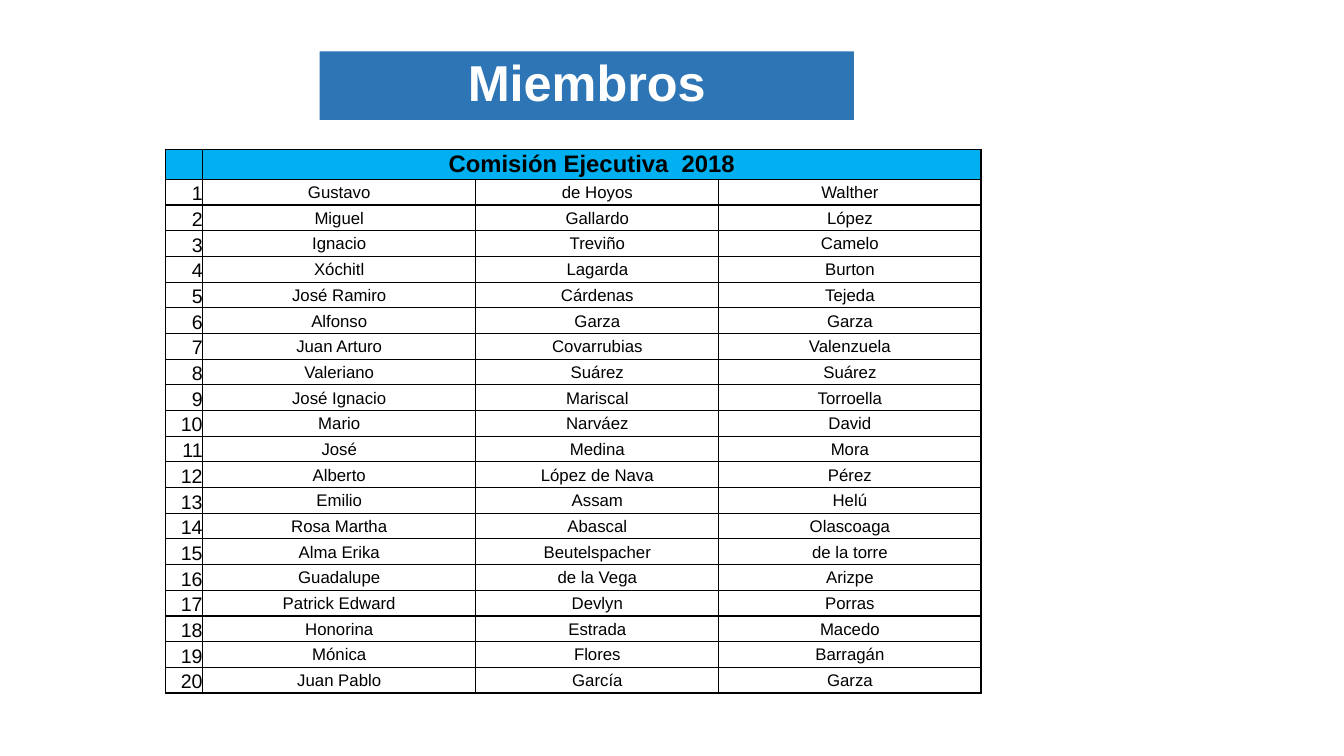
"""Build the slide that lists the members of the 2018 executive committee."""
from lxml import etree
from pptx import Presentation
from pptx.dml.color import RGBColor
from pptx.enum.text import MSO_ANCHOR, MSO_AUTO_SIZE, PP_ALIGN
from pptx.oxml.ns import qn
from pptx.util import Inches, Pt

TITLE = "Miembros"
HEAD = "Comisión Ejecutiva  2018"
NAMES = [
    ("Gustavo", "de Hoyos", "Walther"),
    ("Miguel", "Gallardo", "López"),
    ("Ignacio", "Treviño", "Camelo"),
    ("Xóchitl", "Lagarda", "Burton"),
    ("José Ramiro", "Cárdenas", "Tejeda"),
    ("Alfonso", "Garza", "Garza"),
    ("Juan Arturo", "Covarrubias", "Valenzuela"),
    ("Valeriano", "Suárez", "Suárez"),
    ("José Ignacio", "Mariscal", "Torroella"),
    ("Mario", "Narváez", "David"),
    ("José", "Medina", "Mora"),
    ("Alberto", "López de Nava", "Pérez"),
    ("Emilio", "Assam", "Helú"),
    ("Rosa Martha", "Abascal", "Olascoaga"),
    ("Alma Erika", "Beutelspacher", "de la torre"),
    ("Guadalupe", "de la Vega", "Arizpe"),
    ("Patrick Edward", "Devlyn", "Porras"),
    ("Honorina", "Estrada", "Macedo"),
    ("Mónica", "Flores", "Barragán"),
    ("Juan Pablo", "García", "Garza"),
]
COLS = (0.37, 2.71, 2.41, 2.6)
LEFT, TOP, TALL, HEAD_H = 1.64, 1.48, 5.4, 0.3

BLUE = RGBColor(0x2E, 0x75, 0xB6)
CYAN = RGBColor(0x00, 0xB0, 0xF0)
WHITE = RGBColor(0xFF, 0xFF, 0xFF)
BLACK = RGBColor(0x00, 0x00, 0x00)
MIDDLE, BOTTOM = MSO_ANCHOR.MIDDLE, MSO_ANCHOR.BOTTOM
CENTER, RIGHT = PP_ALIGN.CENTER, PP_ALIGN.RIGHT
FONT = "Arial"


def set_text(para, text, size, color, bold, align):
    para.text = text
    para.alignment = align
    font = para.font
    font.name, font.size, font.bold = FONT, Pt(size), bold
    font.color.rgb = color


def add_lines(cell):
    props = cell._tc.get_or_add_tcPr()
    for side in ("lnL", "lnR", "lnT", "lnB"):
        line = etree.SubElement(props, qn("a:" + side), w=str(Pt(1)))
        fill = etree.SubElement(line, qn("a:solidFill"))
        etree.SubElement(fill, qn("a:srgbClr"), val=str(BLACK))


def set_cell(cell, text, row, col):
    head, number = row == 0, col == 0
    add_lines(cell)
    cell.fill.solid()
    cell.fill.fore_color.rgb = CYAN if head else WHITE
    pad = Inches(0 if head or number else 0.01)
    cell.margin_left = cell.margin_right = cell.margin_top = pad
    cell.margin_bottom = 0
    cell.vertical_anchor = BOTTOM if number else MIDDLE
    size = 17 if head else 14 if number else 12
    align = RIGHT if number else CENTER
    set_text(cell.text_frame.paragraphs[0], text, size, BLACK, head, align)


def add_title(slide):
    title = slide.shapes.title
    title.left, title.top = Inches(3.17), Inches(0.51)
    title.width, title.height = Inches(5.3), Inches(0.68)
    title.fill.solid()
    title.fill.fore_color.rgb = BLUE
    frame = title.text_frame
    frame.auto_size = MSO_AUTO_SIZE.NONE
    frame.word_wrap = True
    frame.vertical_anchor = MIDDLE
    frame.margin_left = frame.margin_right = Inches(0.1)
    frame.margin_top = frame.margin_bottom = Inches(0.1)
    para = frame.paragraphs[0]
    set_text(para, TITLE, 36, WHITE, True, CENTER)
    para.line_spacing = 0.9


def add_list(slide):
    rows = [("", HEAD, "", "")]
    rows += [(str(n), *name) for n, name in enumerate(NAMES, 1)]
    table = slide.shapes.add_table(
        len(rows), len(COLS), Inches(LEFT), Inches(TOP),
        Inches(sum(COLS)), Inches(TALL)).table
    table.first_row = table.horz_banding = False
    for col, width in zip(table.columns, COLS):
        col.width = Inches(width)
    step = (TALL - HEAD_H) / len(NAMES)
    for r, row in enumerate(rows):
        table.rows[r].height = Inches(step if r else HEAD_H)
        for c, text in enumerate(row):
            set_cell(table.cell(r, c), text, r, c)
    table.cell(0, 1).merge(table.cell(0, len(COLS) - 1))


def main():
    deck = Presentation()
    deck.slide_width, deck.slide_height = Inches(13.33), Inches(7.5)
    slide = deck.slides.add_slide(deck.slide_layouts[5])
    add_list(slide)
    add_title(slide)
    deck.save("out.pptx")


if __name__ == "__main__":
    main()
